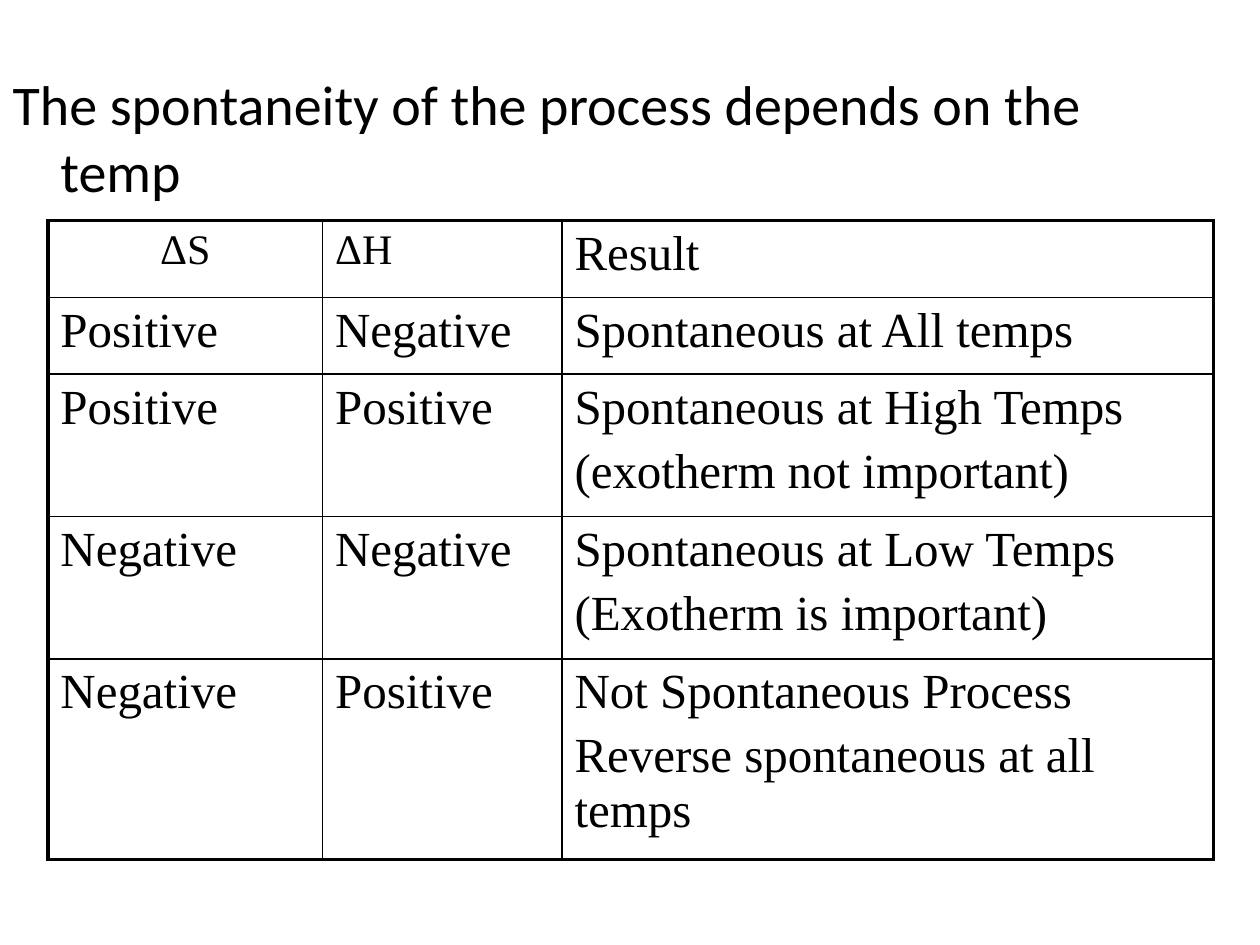
"""Build a slide that tabulates how entropy and enthalpy signs decide spontaneity."""
from dataclasses import dataclass

from lxml import etree
from pptx import Presentation
from pptx.dml.color import RGBColor
from pptx.enum.text import MSO_ANCHOR, MSO_AUTO_SIZE, PP_ALIGN
from pptx.oxml.ns import qn
from pptx.util import Inches, Pt

LEFT, CENTER = PP_ALIGN.LEFT, PP_ALIGN.CENTER
TOP = MSO_ANCHOR.TOP
NO_AUTOFIT = MSO_AUTO_SIZE.NONE
TITLE_ONLY = 5


@dataclass(frozen=True)
class Theme:
    ink: str = "000000"
    heading_font: str = "Calibri"
    table_font: str = "Times New Roman"
    heading_size: int = 32
    symbol_size: int = 24
    body_size: int = 28
    space_share: float = 0.2
    outer_line: float = 2.25
    inner_line: float = 1


THEME = Theme()
HEADING = "The spontaneity of the process depends on the temp"
ROWS = [
    (["ΔS"], ["ΔH"], ["Result"]),
    (["Positive"], ["Negative"], ["Spontaneous at All temps"]),
    (["Positive"], ["Positive"], ["Spontaneous at High Temps", "(exotherm not important)"]),
    (["Negative"], ["Negative"], ["Spontaneous at Low Temps", "(Exotherm is important)"]),
    (["Negative"], ["Positive"], ["Not Spontaneous Process", "Reverse spontaneous at all temps"]),
]
SYMBOLS = ("ΔS", "ΔH")
HEADING_BOX = (0, 0.5, 9.58, 1.33)
TABLE_ORIGIN = (0.38, 1.75)
COLUMN_WIDTHS = (2.18, 1.9, 5.17)
ROW_HEIGHTS = (0.61, 0.61, 1.13, 1.13, 1.59)
HANGING_INDENT = 0.38


def write(paragraph, text, font_name, size, align=LEFT):
    paragraph.alignment = align
    paragraph.space_before = Pt(size * THEME.space_share)
    run = paragraph.add_run()
    run.text = text
    run.font.name = font_name
    run.font.size = Pt(size)
    run.font.color.rgb = RGBColor.from_string(THEME.ink)


def add_heading(slide):
    heading = slide.shapes.title
    heading.left, heading.top, heading.width, heading.height = map(Inches, HEADING_BOX)
    frame = heading.text_frame
    frame.word_wrap = True
    frame.auto_size = NO_AUTOFIT
    frame.vertical_anchor = TOP
    paragraph = frame.paragraphs[0]
    write(paragraph, HEADING, THEME.heading_font, THEME.heading_size)
    indent = Inches(HANGING_INDENT)
    properties = paragraph._p.get_or_add_pPr()
    properties.set("marL", str(indent))
    properties.set("indent", str(-indent))


def set_borders(cell, outer_edges):
    properties = cell._tc.get_or_add_tcPr()
    for position, (edge, is_outer) in enumerate(outer_edges.items()):
        width = THEME.outer_line if is_outer else THEME.inner_line
        line = etree.Element(qn(f"a:ln{edge}"), w=str(Pt(width)))
        fill = etree.SubElement(line, qn("a:solidFill"))
        etree.SubElement(fill, qn("a:srgbClr"), val=THEME.ink)
        properties.insert(position, line)


def fill_cell(cell, lines):
    cell.fill.background()
    cell.vertical_anchor = TOP
    frame = cell.text_frame
    for index, text in enumerate(lines):
        paragraph = frame.add_paragraph() if index else frame.paragraphs[0]
        size = THEME.symbol_size if text in SYMBOLS else THEME.body_size
        align = CENTER if text == SYMBOLS[0] else LEFT
        write(paragraph, text, THEME.table_font, size, align)


def add_results(slide):
    size = (sum(COLUMN_WIDTHS), sum(ROW_HEIGHTS))
    results = slide.shapes.add_table(
        len(ROWS), len(COLUMN_WIDTHS), *map(Inches, TABLE_ORIGIN + size)
    ).table
    results.first_row = results.horz_banding = False
    for column, width in zip(results.columns, COLUMN_WIDTHS):
        column.width = Inches(width)
    for row, height in zip(results.rows, ROW_HEIGHTS):
        row.height = Inches(height)
    last_row, last_column = len(ROWS) - 1, len(COLUMN_WIDTHS) - 1
    for r, entries in enumerate(ROWS):
        for c, lines in enumerate(entries):
            cell = results.cell(r, c)
            fill_cell(cell, lines)
            set_borders(cell, {"L": c == 0, "R": c == last_column,
                               "T": r == 0, "B": r == last_row})


def main():
    deck = Presentation()
    deck.slide_width, deck.slide_height = Inches(10), Inches(7.5)
    slide = deck.slides.add_slide(deck.slide_layouts[TITLE_ONLY])
    add_heading(slide)
    add_results(slide)
    deck.save("out.pptx")


if __name__ == "__main__":
    main()
